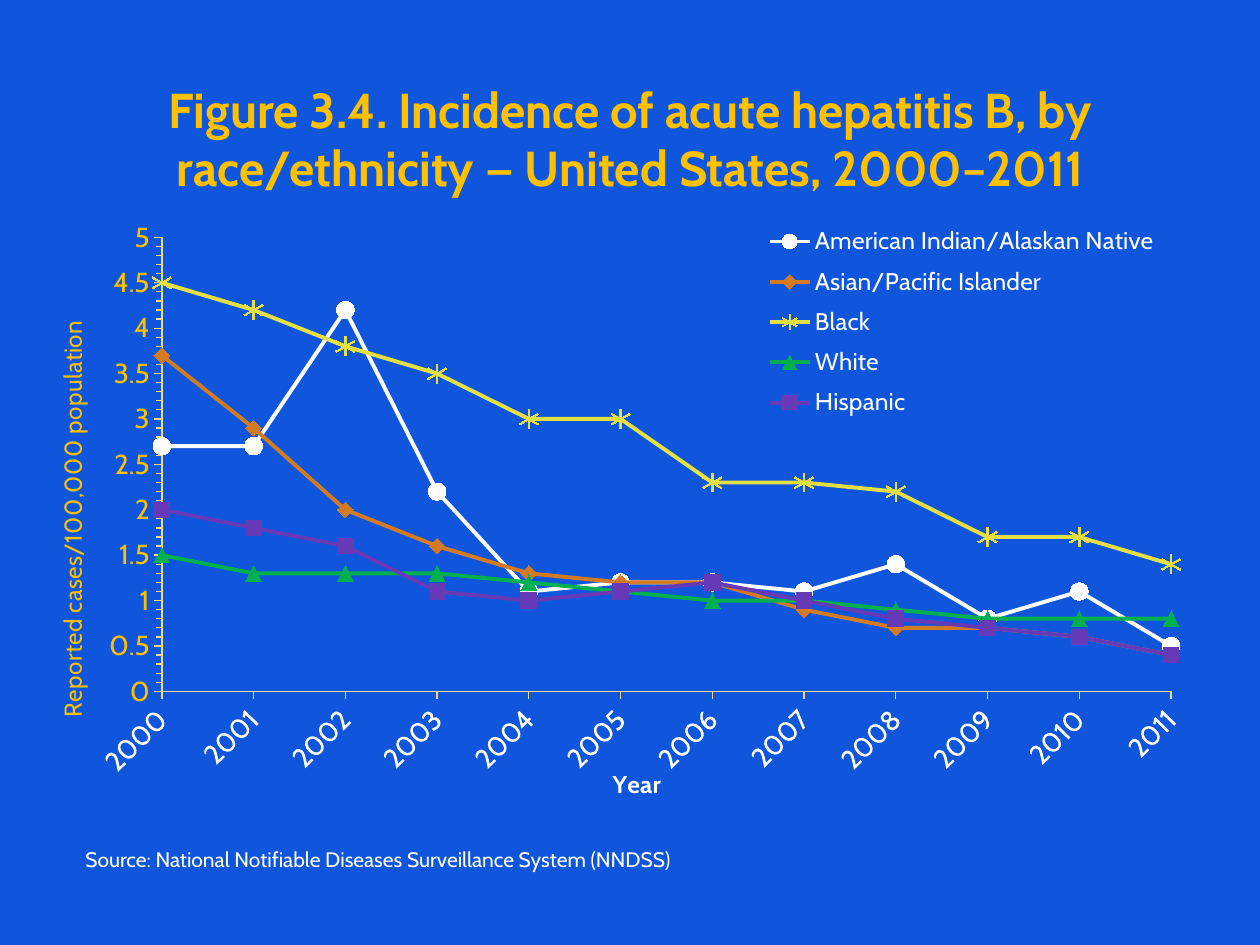
from dataclasses import dataclass

import lxml.etree
import pptx
import pptx.chart.data
import pptx.dml.color
import pptx.enum.chart
import pptx.enum.text
import pptx.oxml
import pptx.oxml.ns
import pptx.util
from pptx.util import Cm


@dataclass(frozen=True)
class Theme:
    font: str = "Cabin"
    background: str = "0F56DC"
    accent: str = "FFC000"
    text: str = "FFFFFF"
    axis: str = "F5D98A"
    title_size: int = 28
    tick_size: int = 16
    label_size: int = 14
    source_size: int = 12
    series_line: float = 2.25
    axis_line: float = 0.75


THEME = Theme()
MARKER = pptx.enum.chart.XL_MARKER_STYLE
YEARS = [str(year) for year in range(2000, 2012)]
SERIES = [
    ("American Indian/Alaskan Native", "FFFFFF", MARKER.CIRCLE, 10,
     (2.7, 2.7, 4.2, 2.2, 1.1, 1.2, 1.2, 1.1, 1.4, 0.8, 1.1, 0.5)),
    ("Asian/Pacific Islander", "D47B22", MARKER.DIAMOND, 9,
     (3.7, 2.9, 2, 1.6, 1.3, 1.2, 1.2, 0.9, 0.7, 0.7, 0.6, 0.4)),
    ("Black", "E4E044", MARKER.STAR, 11,
     (4.5, 4.2, 3.8, 3.5, 3, 3, 2.3, 2.3, 2.2, 1.7, 1.7, 1.4)),
    ("White", "00B050", MARKER.TRIANGLE, 9,
     (1.5, 1.3, 1.3, 1.3, 1.2, 1.1, 1, 1, 0.9, 0.8, 0.8, 0.8)),
    ("Hispanic", "6639B7", MARKER.SQUARE, 9,
     (2, 1.8, 1.6, 1.1, 1, 1.1, 1.2, 1, 0.8, 0.7, 0.6, 0.4)),
]


def rgb(color):
    return pptx.dml.color.RGBColor.from_string(color)


def style_font(font, size, color, bold=False):
    font.name = THEME.font
    font.size = pptx.util.Pt(size)
    font.color.rgb = rgb(color)
    font.bold = bold


def style_line(line, color, width):
    line.color.rgb = rgb(color)
    line.width = pptx.util.Pt(width)


def add_text(slide, text, box, size, color, bold=False, alignment=None):
    frame = slide.shapes.add_textbox(*map(Cm, box)).text_frame
    frame.word_wrap = True
    frame.text = text
    paragraph = frame.paragraphs[0]
    paragraph.alignment = alignment
    style_font(paragraph.runs[0].font, size, color, bold)


def set_layout(element, x, y, width=None, height=None, inner=False):
    qn = pptx.oxml.ns.qn
    for old in element.findall(qn("c:layout")):
        element.remove(old)
    layout = lxml.etree.Element(qn("c:layout"))
    manual = lxml.etree.SubElement(layout, qn("c:manualLayout"))
    values = [("xMode", "edge"), ("yMode", "edge"), ("x", x), ("y", y)]
    if inner:
        values.insert(0, ("layoutTarget", "inner"))
    if width is not None:
        values += [("w", width), ("h", height)]
    for name, value in values:
        lxml.etree.SubElement(manual, qn(f"c:{name}")).set("val", str(value))
    before = [child for child in element
              if child.tag in (qn("c:tx"), qn("c:legendPos"))]
    element.insert(len(before), layout)


def rotate_text(element, degrees):
    body = next(element.iter(pptx.oxml.ns.qn("a:bodyPr")))
    body.set("rot", str(degrees * 60000))


def cross_on_tick_marks(axis):
    qn = pptx.oxml.ns.qn
    for old in axis._element.findall(qn("c:crossBetween")):
        axis._element.remove(old)
    crossing = lxml.etree.Element(qn("c:crossBetween"))
    crossing.set("val", "midCat")
    axis._element.find(qn("c:crosses")).addnext(crossing)


def style_axis(axis, title, title_color, tick_color, position, bold):
    axis.has_major_gridlines = False
    axis.major_tick_mark = pptx.enum.chart.XL_TICK_MARK.OUTSIDE
    style_line(axis.format.line, THEME.axis, THEME.axis_line)
    style_font(axis.tick_labels.font, THEME.tick_size, tick_color)
    axis.axis_title.text_frame.text = title
    run = axis.axis_title.text_frame.paragraphs[0].runs[0]
    style_font(run.font, THEME.label_size, title_color, bold)
    set_layout(axis.axis_title._element, *position)


def style_axes(chart):
    years, rates = chart.category_axis, chart.value_axis
    style_axis(years, "Year", THEME.text, THEME.text, (0.487, 0.94), True)
    style_axis(rates, "Reported cases/100,000 population", THEME.accent,
               THEME.accent, (0.01, 0.19), False)
    rotate_text(years._element.find(pptx.oxml.ns.qn("c:txPr")), -45)
    rotate_text(rates.axis_title._element, -90)
    rates.minimum_scale, rates.maximum_scale = 0, 5
    rates.major_unit, rates.minor_unit = 0.5, 0.1
    rates.minor_tick_mark = pptx.enum.chart.XL_TICK_MARK.OUTSIDE
    rates.tick_labels.number_format = "General"
    rates.tick_labels.number_format_is_linked = False
    cross_on_tick_marks(rates)


def style_series(series, color, marker, size):
    series.smooth = False
    style_line(series.format.line, color, THEME.series_line)
    series.marker.style = marker
    series.marker.size = size
    series.marker.format.fill.solid()
    series.marker.format.fill.fore_color.rgb = rgb(color)
    style_line(series.marker.format.line, color, THEME.axis_line)


def add_incidence_chart(slide):
    data = pptx.chart.data.CategoryChartData()
    data.categories = YEARS
    for name, color, marker, size, values in SERIES:
        data.add_series(name, values)
    chart = slide.shapes.add_chart(
        pptx.enum.chart.XL_CHART_TYPE.LINE_MARKERS,
        Cm(0.79), Cm(4.24), Cm(23.55), Cm(12.04), data).chart
    chart.has_title = False
    style_font(chart.font, THEME.tick_size, THEME.accent)
    plot = chart.plots[0]
    plot.vary_by_categories = False
    for series, (name, color, marker, size, values) in zip(plot.series, SERIES):
        style_series(series, color, marker, size)
    style_axes(chart)
    chart.has_legend = True
    chart.legend.position = pptx.enum.chart.XL_LEGEND_POSITION.RIGHT
    chart.legend.include_in_layout = False
    style_font(chart.legend.font, THEME.label_size, THEME.text)
    set_layout(chart.legend._element, 0.61, 0.01, 0.36, 0.36)
    plot_area = chart._chartSpace.chart.plotArea
    set_layout(plot_area, 0.105, 0.046, 0.864, 0.772, inner=True)


def main():
    presentation = pptx.Presentation()
    presentation.slide_width, presentation.slide_height = Cm(25.4), Cm(19.05)
    slide = presentation.slides.add_slide(presentation.slide_layouts[6])
    slide.background.fill.solid()
    slide.background.fill.fore_color.rgb = rgb(THEME.background)
    add_text(slide, "Figure 3.4. Incidence of acute hepatitis B, by "
             "race/ethnicity — United States, 2000–2011",
             (1.27, 1.47, 22.86, 2.97), THEME.title_size, THEME.accent,
             True, pptx.enum.text.PP_ALIGN.CENTER)
    add_incidence_chart(slide)
    add_text(slide, "Source: National Notifiable Diseases Surveillance System (NNDSS)",
             (1.47, 16.94, 21.59, 0.76), THEME.source_size, THEME.text)
    presentation.save("out.pptx")


if __name__ == "__main__":
    main()
